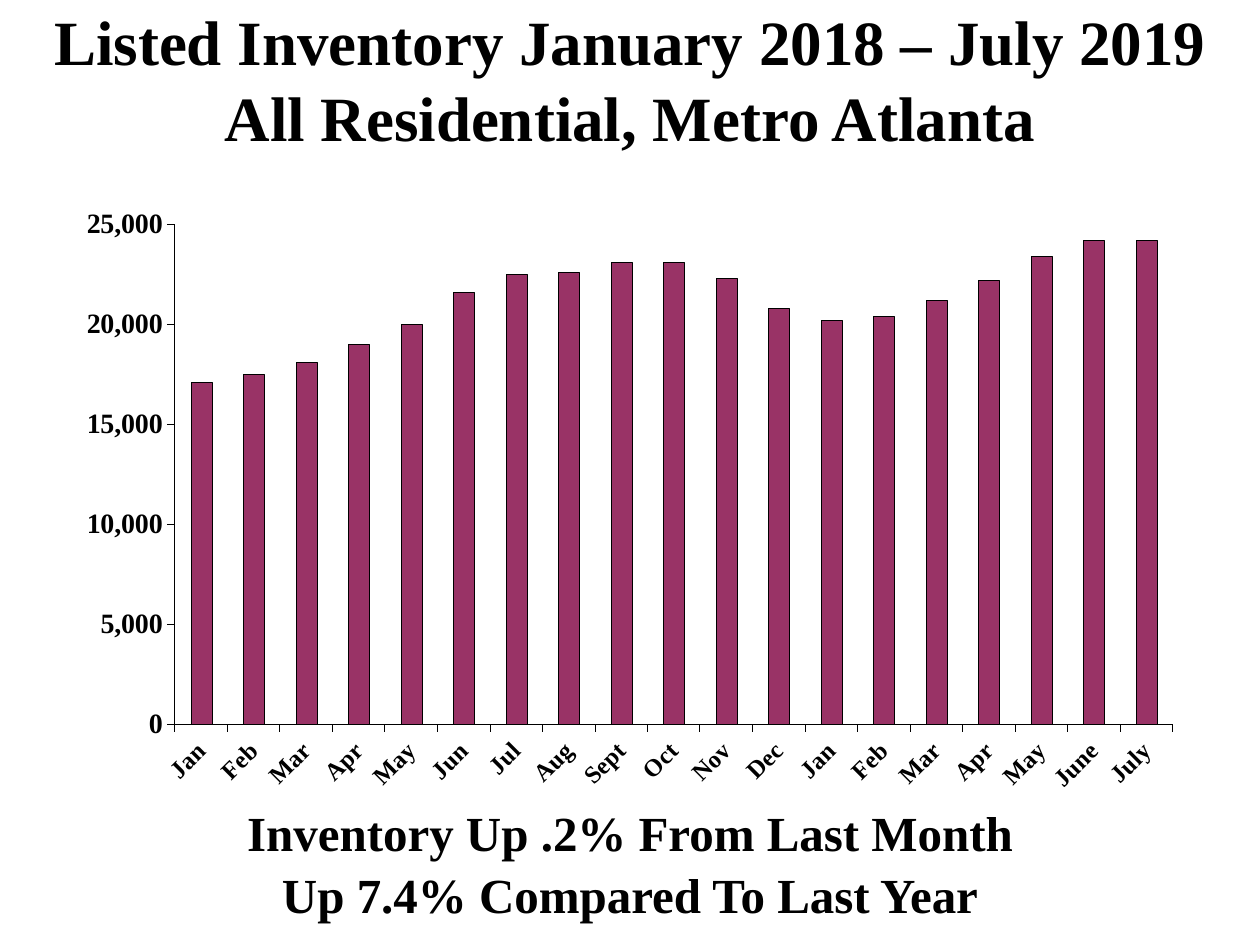
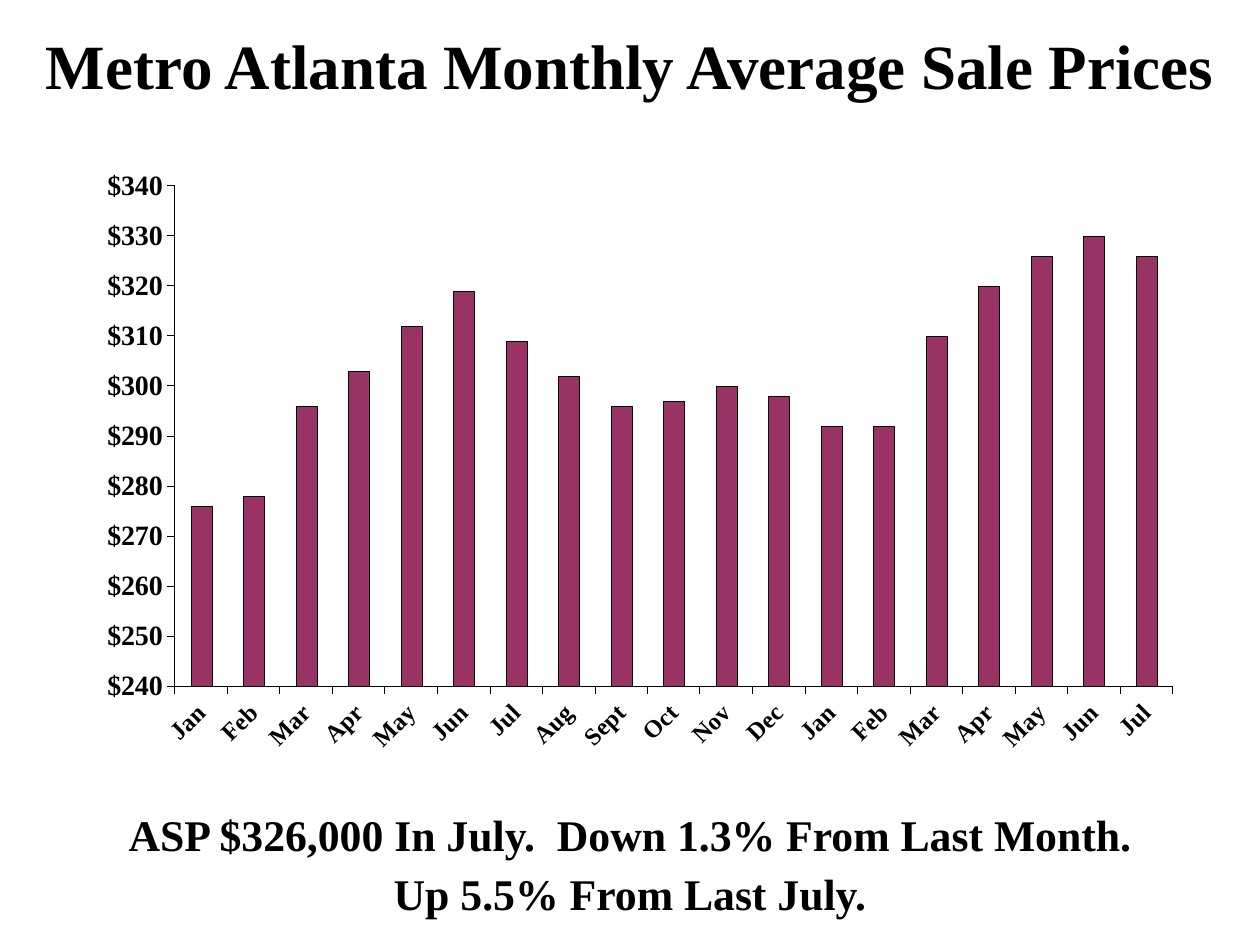
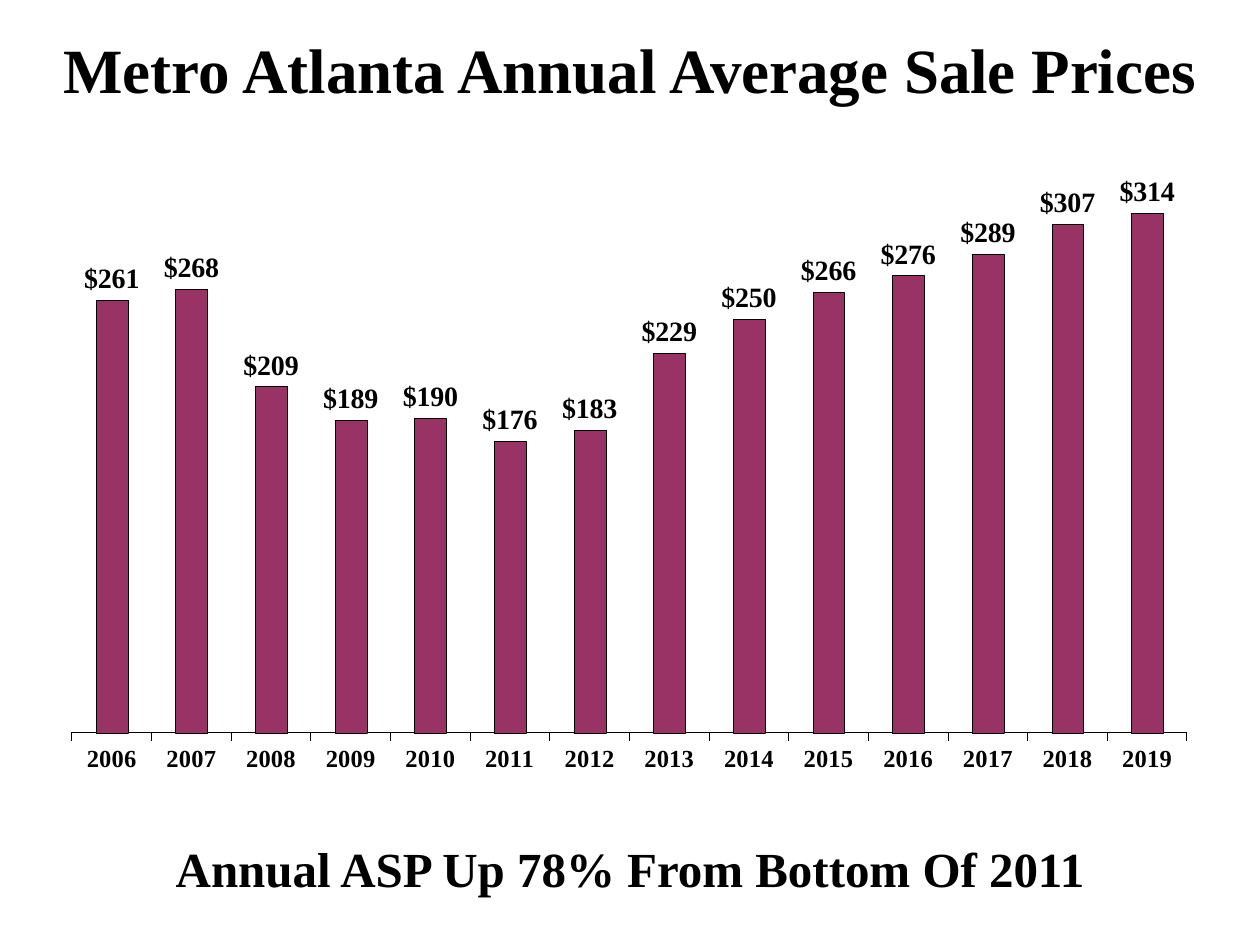
import pptx
import pptx.chart.data
import pptx.dml.color
import pptx.enum.chart
import pptx.enum.text
import pptx.oxml
import pptx.oxml.ns
import pptx.util

Cm = pptx.util.Cm
Pt = pptx.util.Pt

FONT = "Times New Roman"
COLORS = {"text": "000000", "line": "000000", "bar": "993366"}
SLIDE_W, SLIDE_H = 25.4, 19.05
MONTHS = ["Jan", "Feb", "Mar", "Apr", "May", "Jun",
          "Jul", "Aug", "Sept", "Oct", "Nov", "Dec"]
MONTHLY_PLOT = (0.107, 0.088, 0.876, 0.717)
ANNUAL_PLOT = (0.008, 0.087, 0.992, 0.792)

INVENTORY = [17100, 17500, 18100, 19000, 20000, 21600, 22500, 22600, 23100, 23100,
             22300, 20800, 20200, 20400, 21200, 22200, 23400, 24200, 24200]
MONTHLY_PRICES = [276, 278, 296, 303, 312, 319, 309, 302, 296, 297,
                  300, 298, 292, 292, 310, 320, 326, 330, 326]
ANNUAL_PRICES = [261, 268, 209, 189, 190, 176, 183, 229, 250, 266, 276, 289, 307, 314]


def rgb(name):
    return pptx.dml.color.RGBColor.from_string(COLORS[name])


def style_font(font, size):
    font.name = FONT
    font.size = Pt(size)
    font.bold = True
    font.color.rgb = rgb("text")


def style_line(line, width):
    line.color.rgb = rgb("line")
    line.width = Pt(width)


def add_text(slide, lines, box, size, spacing=1.0, gap=0):
    """Centred bold lines, one paragraph each, with gap points between them."""
    tf = slide.shapes.add_textbox(*map(Cm, box)).text_frame
    tf.word_wrap = True
    tf.vertical_anchor = pptx.enum.text.MSO_ANCHOR.MIDDLE
    tf.text = "\n".join(lines)
    for i, p in enumerate(tf.paragraphs):
        p.alignment = pptx.enum.text.PP_ALIGN.CENTER
        p.line_spacing = spacing
        p.space_before = Pt(gap if i else 0)
        for r in p.runs:
            style_font(r.font, size)


def add_title(slide, lines, top, height=1.07):
    add_text(slide, lines, (0, top, SLIDE_W, height), 36)


def add_caption(slide, lines, top, height=2.54, size=28, gap=5):
    add_text(slide, lines, (0, top, SLIDE_W, height), size, 0.9, gap)


def set_plot_layout(chart, plot):
    """Fix the inner plot area as fractions of the chart: x, y, w, h."""
    area = chart._chartSpace.chart.plotArea
    for old in area.findall(pptx.oxml.ns.qn("c:layout")):
        area.remove(old)
    modes = "".join(f'<c:{k}Mode val="edge"/>' for k in "xy")
    sizes = "".join(f'<c:{k} val="{v}"/>' for k, v in zip("xywh", plot))
    area.insert(0, pptx.oxml.parse_xml(
        f'<c:layout {pptx.oxml.ns.nsdecls("c")}><c:manualLayout>'
        f'<c:layoutTarget val="inner"/>{modes}{sizes}</c:manualLayout></c:layout>'))


def style_axis(axis, size, line_width):
    axis.has_major_gridlines = False
    axis.major_tick_mark = pptx.enum.chart.XL_TICK_MARK.OUTSIDE
    axis.minor_tick_mark = pptx.enum.chart.XL_TICK_MARK.NONE
    style_font(axis.tick_labels.font, size)
    style_line(axis.format.line, line_width)


def add_columns(slide, cats, vals, box, plot, scale, fmt):
    """Column chart; scale is the minimum, maximum and step of the value axis."""
    data = pptx.chart.data.CategoryChartData()
    data.categories = cats
    data.add_series("Series 1", vals)
    chart = slide.shapes.add_chart(
        pptx.enum.chart.XL_CHART_TYPE.COLUMN_CLUSTERED, *map(Cm, box), data).chart
    chart.has_legend = False
    chart.has_title = False
    style_font(chart.font, 14)
    set_plot_layout(chart, plot)

    columns = chart.plots[0]
    columns.vary_by_categories = False
    columns.gap_width = 150
    series = columns.series[0]
    series.format.fill.solid()
    series.format.fill.fore_color.rgb = rgb("bar")
    style_line(series.format.line, 0.06)

    style_axis(chart.category_axis, 14, 0.01)
    chart.category_axis.tick_label_position = pptx.enum.chart.XL_TICK_LABEL_POSITION.LOW
    axis = chart.value_axis
    style_axis(axis, 16, 0.01)
    axis.minimum_scale, axis.maximum_scale, axis.major_unit = scale
    axis.tick_labels.number_format = fmt
    axis.tick_labels.number_format_is_linked = False
    return chart


def add_monthly_columns(slide, cats, vals, top, scale, fmt):
    chart = add_columns(slide, cats, vals, (1.07, top, 22.96, 14.07),
                        MONTHLY_PLOT, scale, fmt)
    body = chart.category_axis._element.find(".//" + pptx.oxml.ns.qn("a:bodyPr"))
    body.set("rot", "-2700000")
    body.set("vert", "horz")


def add_labelled_columns(slide, cats, vals, box, scale, fmt):
    """Column chart with values above the columns in place of a value axis."""
    chart = add_columns(slide, cats, vals, box, ANNUAL_PLOT, scale, fmt)
    chart.value_axis.visible = False
    columns = chart.plots[0]
    columns.has_data_labels = True
    labels = columns.data_labels
    labels.show_value = True
    labels.position = pptx.enum.chart.XL_LABEL_POSITION.OUTSIDE_END
    labels.number_format = fmt
    labels.number_format_is_linked = False
    style_font(labels.font, 16)


def build_inventory(slide):
    add_caption(slide, ["Inventory Up .2% From Last Month",
                        "Up 7.4% Compared To Last Year"], 16.2)
    add_title(slide, ["Listed Inventory January 2018 – July 2019",
                      "All Residential, Metro Atlanta"], 0.2, 2.75)
    add_monthly_columns(slide, MONTHS + MONTHS[:5] + ["June", "July"], INVENTORY,
                        3.28, (0, 25000, 5000), "#,##0")


def build_monthly_prices(slide):
    add_caption(slide, ["ASP $326,000 In July.  Down 1.3% From Last Month.",
                        "Up 5.5% From Last July."], 16.2, size=25, gap=6.75)
    add_title(slide, ["Metro Atlanta Monthly Average Sale Prices"], 0.76)
    add_monthly_columns(slide, MONTHS + MONTHS[:7], MONTHLY_PRICES,
                        2.51, (240, 340, 10), '"$"#,##0')


def build_annual_prices(slide):
    add_caption(slide, ["Annual ASP Up 78% From Bottom Of 2011"], 16.84, 1.47)
    add_labelled_columns(slide, [str(year) for year in range(2006, 2020)], ANNUAL_PRICES,
                         (1.27, 1.8, 22.66, 14.76), (0, 350, 50), "\\$#,##0")
    add_title(slide, ["Metro Atlanta Annual Average Sale Prices"], 0.84)


def main():
    prs = pptx.Presentation()
    prs.slide_width, prs.slide_height = Cm(SLIDE_W), Cm(SLIDE_H)
    for build in (build_inventory, build_monthly_prices, build_annual_prices):
        build(prs.slides.add_slide(prs.slide_layouts[6]))
    prs.save("out.pptx")


if __name__ == "__main__":
    main()
